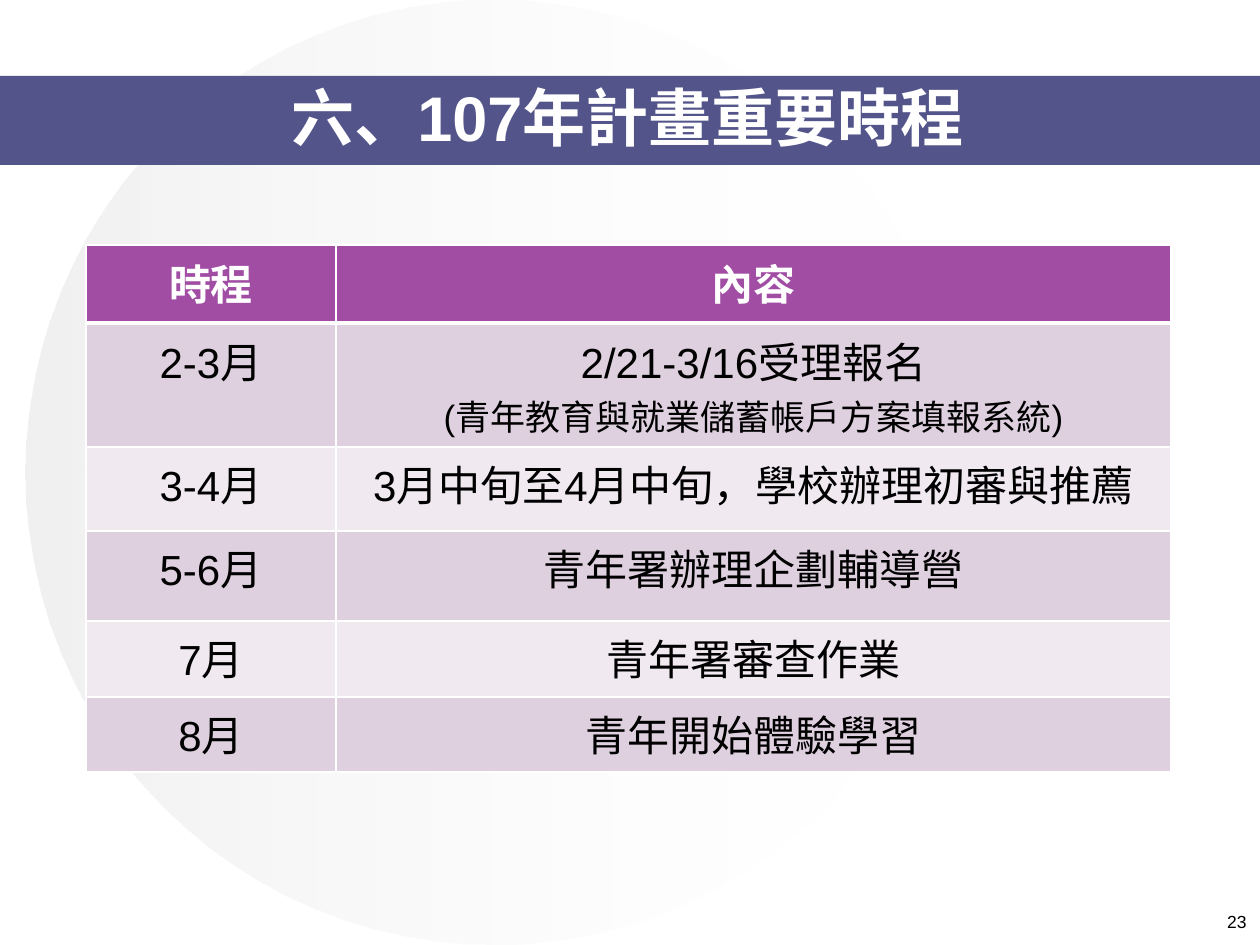
from lxml import etree
from pptx import Presentation, util as u
from pptx.dml.color import RGBColor
from pptx.enum import shapes, text
from pptx.oxml import ns

SCALE = 914400 / 126
FONT = "Arial"
WHITE = RGBColor(0xFF, 0xFF, 0xFF)
BLACK = RGBColor(0, 0, 0)
GREY = RGBColor(0xDE, 0xDE, 0xDE)
NAVY = RGBColor(0x53, 0x54, 0x8A)
PURPLE = RGBColor(0xA0, 0x4D, 0xA3)
LILAC = RGBColor(0xDF, 0xD0, 0xE0)
PALE = RGBColor(0xF0, 0xE9, 0xF0)

COLUMNS = [250, 835]
SCHEDULE = [
    (78, "時程", ["內容"]),
    (124, "2-3月", ["2/21-3/16受理報名", "(青年教育與就業儲蓄帳戶方案填報系統)"]),
    (84, "3-4月", ["3月中旬至4月中旬，學校辦理初審與推薦"]),
    (90, "5-6月", ["青年署辦理企劃輔導營"]),
    (76, "7月", ["青年署審查作業"]),
    (75, "8月", ["青年開始體驗學習"]),
]


def px(n):
    return u.Emu(round(n * SCALE))


def write(p, content, size, color, bold=False, align=text.PP_ALIGN.CENTER):
    p.alignment = align
    r = p.add_run()
    r.text = content
    for name, value in {"name": FONT, "size": u.Pt(size), "bold": bold}.items():
        setattr(r.font, name, value)
    r.font.color.rgb = color


def add_shape(s, kind, *box):
    sp = s.shapes.add_shape(kind, *map(px, box))
    sp.shadow.inherit = False
    sp.line.fill.background()
    return sp


def add_circle(s):
    sp = add_shape(s, shapes.MSO_SHAPE.OVAL, 25, 0, 937, 945)
    sp.fill.gradient()
    sp.fill.gradient_angle = 0
    for stop, color, position, alpha in zip(
        sp.fill.gradient_stops, (GREY, WHITE), (0, 1), (44, 0)
    ):
        stop.color.rgb = color
        stop.position = position
    for node, alpha in zip(sp.fill._xPr.iter(ns.qn("a:srgbClr")), (44, 0)):
        etree.SubElement(node, ns.qn("a:alpha"), val=str(alpha * 1000))


def add_band(s):
    sp = add_shape(s, shapes.MSO_SHAPE.RECTANGLE, 0, 76, 1260, 89)
    sp.fill.solid()
    sp.fill.fore_color.rgb = NAVY


def add_text(s, box, content, size, color, **style):
    tf = s.shapes.add_textbox(*map(px, box)).text_frame
    tf.word_wrap = True
    tf.vertical_anchor = text.MSO_ANCHOR.MIDDLE
    write(tf.paragraphs[0], content, size, color, **style)


def add_border(cell, side, points):
    ln = etree.SubElement(
        cell._tc.get_or_add_tcPr(), ns.qn(f"a:ln{side}"), w=str(u.Pt(points))
    )
    fill = etree.SubElement(ln, ns.qn("a:solidFill"))
    etree.SubElement(fill, ns.qn("a:srgbClr"), val=str(WHITE))


def fill_cell(cell, lines, row):
    header = row == 0
    for side in "LRTB":
        heavy = (row, side) in ((0, "B"), (1, "T"))
        add_border(cell, side, 3 if heavy else 1)
    cell.fill.solid()
    cell.fill.fore_color.rgb = PURPLE if header else LILAC if row % 2 else PALE
    tf = cell.text_frame
    for i, line in enumerate(lines):
        p = tf.add_paragraph() if i else tf.paragraphs[0]
        write(p, line, 20 if i else 24, WHITE if header else BLACK, header)


def add_schedule(s):
    heights = [row[0] for row in SCHEDULE]
    box = (86, 245, sum(COLUMNS), sum(heights))
    table = s.shapes.add_table(len(SCHEDULE), len(COLUMNS), *map(px, box)).table
    for column, width in zip(table.columns, COLUMNS):
        column.width = px(width)
    for i, (height, period, lines) in enumerate(SCHEDULE):
        table.rows[i].height = px(height)
        fill_cell(table.cell(i, 0), [period], i)
        fill_cell(table.cell(i, 1), lines, i)


def main():
    prs = Presentation()
    prs.slide_width, prs.slide_height = px(1260), px(945)
    s = prs.slides.add_slide(prs.slide_layouts[6])
    add_circle(s)
    add_band(s)
    add_text(s, (213, 83, 829, 67), "六、107年計畫重要時程", 36, WHITE, bold=True)
    add_text(s, (1143, 903, 116, 37), "23", 10, BLACK, align=text.PP_ALIGN.RIGHT)
    add_schedule(s)
    prs.save("out.pptx")


if __name__ == "__main__":
    main()
